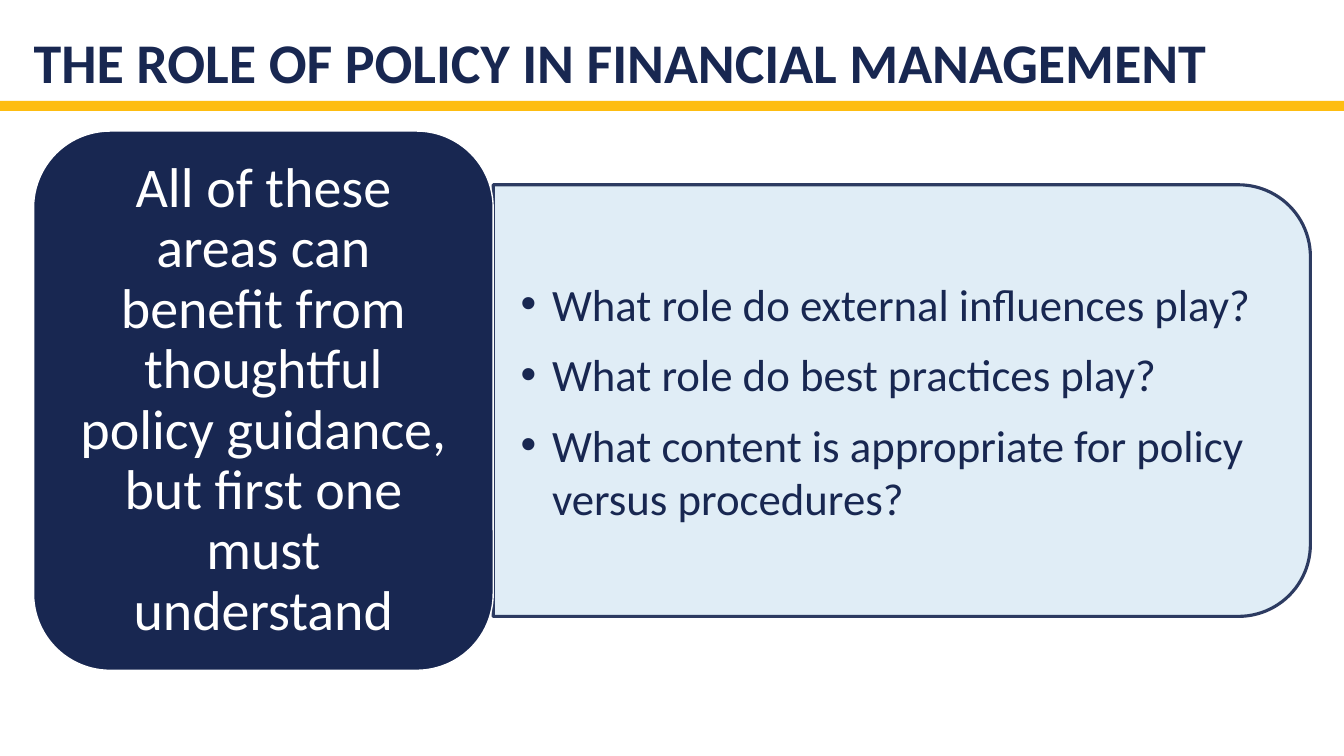
import pptx
import pptx.util
import pptx.dml.color
import pptx.enum.shapes
import pptx.enum.text
import pptx.oxml
import pptx.oxml.ns

Pt = pptx.util.Pt
SHAPE = pptx.enum.shapes.MSO_SHAPE
ANCHOR = pptx.enum.text.MSO_ANCHOR
ALIGN = pptx.enum.text.PP_ALIGN

WIDTH, HEIGHT = 960, 540
MARGIN = 24
NAVY, GOLD, PALE, WHITE = "182751", "FEBD11", "DDECF6", "FFFFFF"

TITLE = "THE ROLE OF POLICY IN FINANCIAL MANAGEMENT"
LEAD = ("All of these areas can benefit from thoughtful policy guidance, "
        "but first one must understand")
QUESTIONS = [
    "What role do external influences play?",
    "What role do best practices play?",
    "What content is appropriate for policy versus procedures?",
]


def color(value):
    return pptx.dml.color.RGBColor.from_string(value)


def set_values(target, values):
    for name, value in values.items():
        setattr(target, name, value)


def place(shape, box):
    names = ("left", "top", "width", "height")
    set_values(shape, dict(zip(names, map(Pt, box))))


def format_frame(frame, anchor, side, end):
    """Anchor the text and set its side and top/bottom insets."""
    set_values(frame, {
        "word_wrap": True, "auto_size": pptx.enum.text.MSO_AUTO_SIZE.NONE,
        "vertical_anchor": anchor,
        "margin_left": Pt(side), "margin_right": Pt(side),
        "margin_top": Pt(end), "margin_bottom": Pt(end),
    })


def format_para(para, text, size, ink, layout, bold=False):
    para.text = text
    set_values(para, layout)
    for span in para.runs:
        set_values(span.font, {"name": "Calibri", "size": Pt(size), "bold": bold})
        span.font.color.rgb = color(ink)


def add_bullet(para, indent):
    properties = para._p.get_or_add_pPr()
    properties.set("marL", str(Pt(indent)))
    properties.set("indent", str(-Pt(indent)))
    bullet = pptx.oxml.parse_xml(
        f'<a:buChar {pptx.oxml.ns.nsdecls("a")} char="•"/>')
    properties.append(bullet)


def set_opacity(fill, percent):
    choice = fill._xPr.find(pptx.oxml.ns.qn("a:solidFill"))
    choice[0].append(pptx.oxml.parse_xml(
        f'<a:alpha {pptx.oxml.ns.nsdecls("a")} val="{percent * 1000}"/>'))


def add_block(page, kind, box, fill, line=None, weight=0):
    block = page.shapes.add_shape(kind, *map(Pt, box))
    block.shadow.inherit = False
    block.fill.solid()
    block.fill.fore_color.rgb = color(fill)
    if line:
        block.line.color.rgb = color(line)
        block.line.width = Pt(weight)
    else:
        block.line.fill.background()
    return block


def build_header(page, box):
    left, top, width, height = box
    title = page.shapes.title
    place(title, (left + MARGIN, top, width - 2 * MARGIN, height))
    format_frame(title.text_frame, ANCHOR.BOTTOM, 0, 3.6)
    format_para(title.text_frame.paragraphs[0], TITLE, 40, NAVY,
                {"alignment": ALIGN.LEFT, "line_spacing": 0.9}, bold=True)
    add_block(page, SHAPE.RECTANGLE, (left, top + height, width, 7.2), GOLD)


def build_questions(page, box):
    """Pale panel rounded on its right side, with the list on top of it."""
    left, top, width, height = box
    turned = (left + (width - height) / 2, top + (height - width) / 2, height, width)
    panel = add_block(page, SHAPE.ROUND_2_SAME_RECTANGLE, turned, PALE, NAVY, 2.25)
    panel.rotation = 90
    for fill in (panel.fill, panel.line.fill):
        set_opacity(fill, 90)

    body = page.placeholders[1]
    panel.element.addnext(body.element)
    place(body, (left, top + 15, width - 15, height - 30))
    frame = body.text_frame
    format_frame(frame, ANCHOR.MIDDLE, 19.5, 10)
    for index, question in enumerate(QUESTIONS):
        para = frame.add_paragraph() if index else frame.paragraphs[0]
        add_bullet(para, 22.5)
        format_para(para, question, 32, NAVY, {
            "alignment": ALIGN.LEFT, "space_before": Pt(0), "space_after": Pt(12)})


def build_lead(page, box):
    card = add_block(page, SHAPE.ROUNDED_RECTANGLE, box, NAVY, WHITE, 1)
    format_frame(card.text_frame, ANCHOR.MIDDLE, 12, 6)
    format_para(card.text_frame.paragraphs[0], LEAD, 40, WHITE,
                {"alignment": ALIGN.CENTER, "line_spacing": 0.9})


def main():
    deck = pptx.Presentation()
    deck.slide_width, deck.slide_height = Pt(WIDTH), Pt(HEIGHT)
    page = deck.slides.add_slide(deck.slide_layouts[1])
    build_header(page, (0, 0, WIDTH, 72))
    card_width = 328.3
    panel_left = MARGIN + card_width
    build_questions(page, (panel_left, 132, WIDTH - MARGIN - panel_left, 308.3))
    build_lead(page, (MARGIN, 93.6, card_width, 385.2))
    deck.save("out.pptx")


if __name__ == "__main__":
    main()
